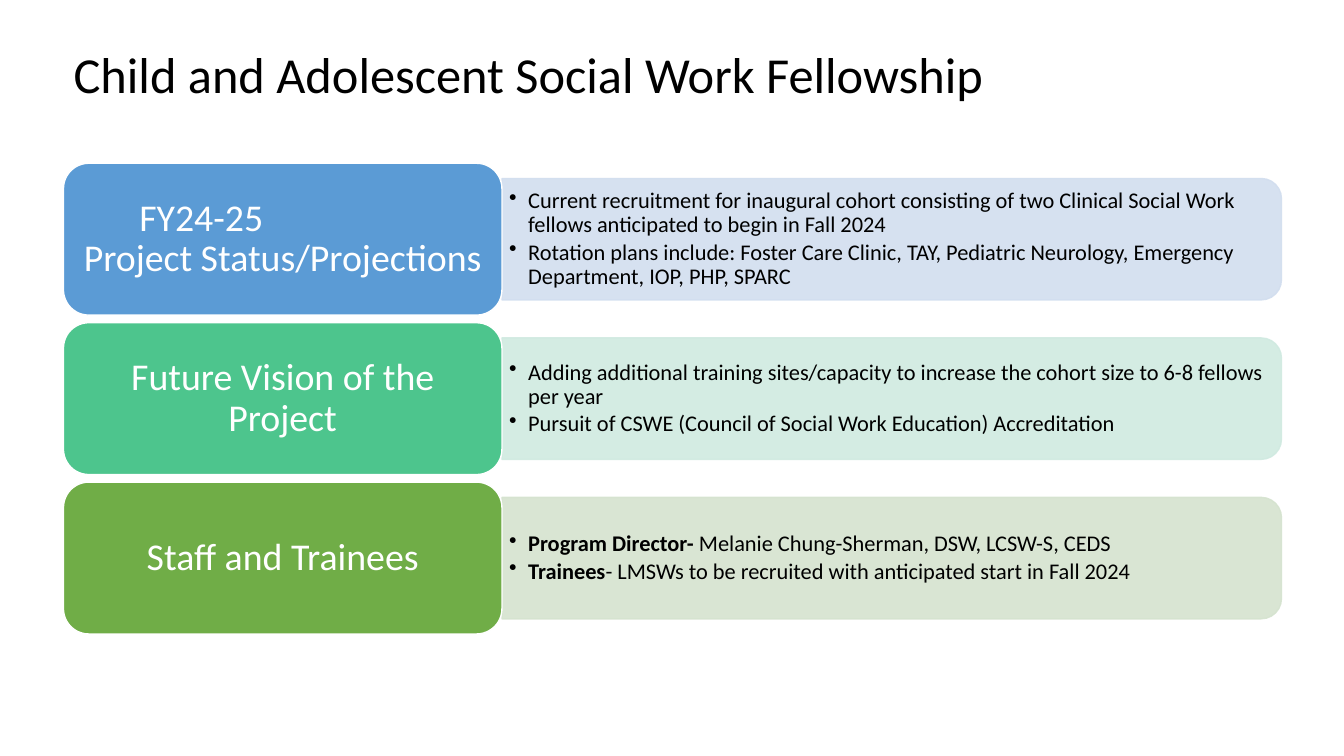
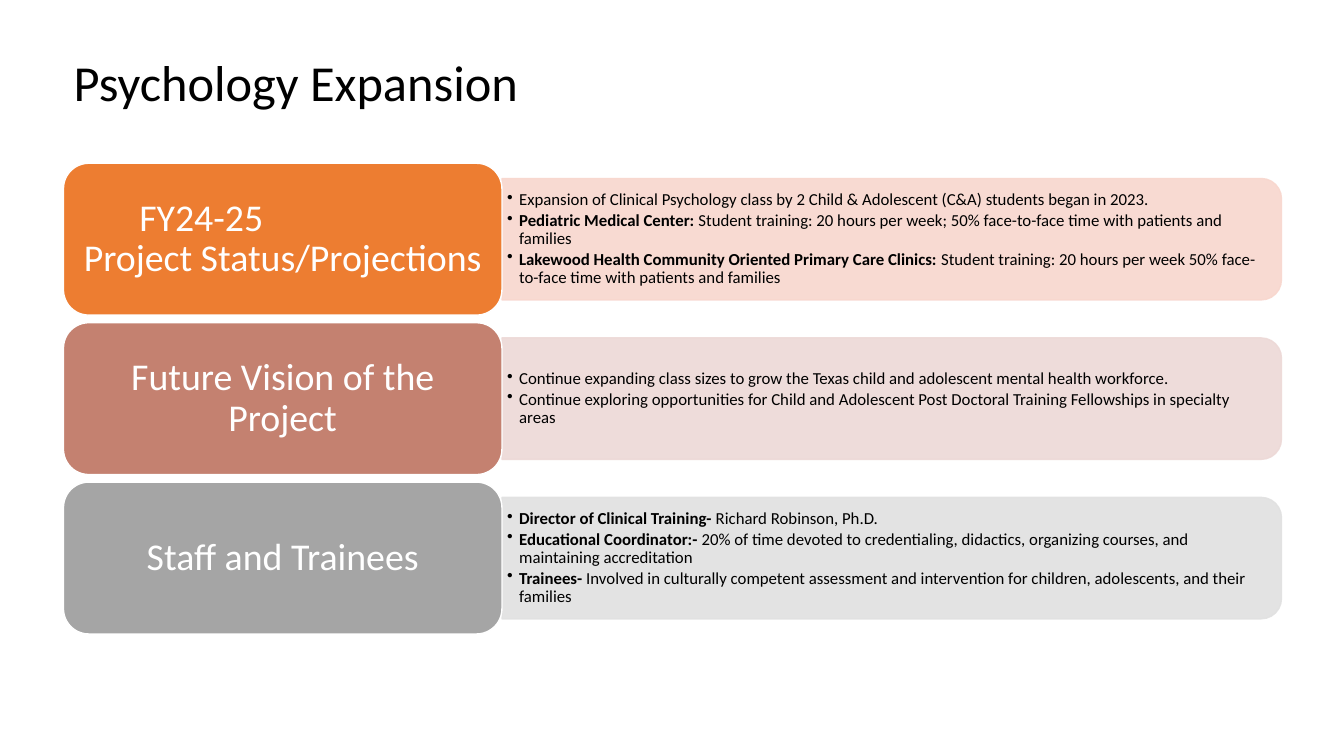
from dataclasses import dataclass

import pptx
import pptx.dml.color
import pptx.enum.shapes
import pptx.enum.text
import pptx.oxml
import pptx.oxml.ns
import pptx.util

RGBColor = pptx.dml.color.RGBColor
Shape = pptx.enum.shapes.MSO_SHAPE
Align = pptx.enum.text.PP_ALIGN
Anchor = pptx.enum.text.MSO_ANCHOR
Inches = pptx.util.Inches
Pt = pptx.util.Pt

FONT = "Calibri"
BLACK = RGBColor(0x00, 0x00, 0x00)
WHITE = RGBColor(0xFF, 0xFF, 0xFF)
BLUE = RGBColor(0x5B, 0x9B, 0xD5)
PALE_BLUE = RGBColor(0xD2, 0xDE, 0xEF)
MINT = RGBColor(0x4D, 0xC5, 0x8D)
PALE_MINT = RGBColor(0xD0, 0xEA, 0xE1)
GREEN = RGBColor(0x70, 0xAD, 0x47)
PALE_GREEN = RGBColor(0xD5, 0xE3, 0xCF)
ORANGE = RGBColor(0xED, 0x7D, 0x31)
PALE_ORANGE = RGBColor(0xF8, 0xD7, 0xCE)
ROSE = RGBColor(0xC4, 0x81, 0x70)
PALE_ROSE = RGBColor(0xED, 0xD9, 0xD7)
GRAY = RGBColor(0xA5, 0xA5, 0xA5)
PALE_GRAY = RGBColor(0xE1, 0xE1, 0xE1)

COOL = [(BLUE, PALE_BLUE), (MINT, PALE_MINT), (GREEN, PALE_GREEN)]
WARM = [(ORANGE, PALE_ORANGE), (ROSE, PALE_ROSE), (GRAY, PALE_GRAY)]

HEADINGS = [
    ["FY24-25", "Project Status/Projections"],
    ["Future Vision of the Project"],
    ["Staff and Trainees"],
]
TAB_SHARE = 0.36
GAP_SHARE = 0.05
BAR_SHARE = 0.8
LINE_SPACING = 0.9


@dataclass
class Box:
    left: float
    top: float
    width: float
    height: float

    def inner(self, x, y, w, h):
        return Box(self.left + x * self.width, self.top + y * self.height,
                   w * self.width, h * self.height)

    def turned(self):
        return Box(self.left + (self.width - self.height) / 2,
                   self.top + (self.height - self.width) / 2,
                   self.height, self.width)

    def emu(self):
        return [Inches(v) for v in (self.left, self.top, self.width, self.height)]


@dataclass
class BulletStyle:
    size: int
    indent: float
    inset: float


LARGE = BulletStyle(16, 0.19, 0.07)
SMALL = BulletStyle(12, 0.12, 0.05)

PAGE = Box(0, 0, 13.33, 7.5)
DIAGRAM = Box(0.63, 1.62, 12.08, 4.67)


def set_font(paragraph, size, color):
    paragraph.line_spacing = LINE_SPACING
    paragraph.font.size = Pt(size)
    paragraph.font.name = FONT
    paragraph.font.color.rgb = color


def set_frame(frame, inset_x, inset_y):
    frame.word_wrap = True
    frame.vertical_anchor = Anchor.MIDDLE
    frame.margin_left = frame.margin_right = Inches(inset_x)
    frame.margin_top = frame.margin_bottom = Inches(inset_y)


def set_indent(paragraph, left, first=0):
    properties = paragraph._p.get_or_add_pPr()
    properties.set("marL", str(Inches(left)))
    properties.set("indent", str(Inches(first)))
    return properties


def add_panel(slide, kind, box, fill, line):
    panel = slide.shapes.add_shape(kind, *box.emu())
    panel.shadow.inherit = False
    panel.fill.solid()
    panel.fill.fore_color.rgb = fill
    panel.line.color.rgb = line
    panel.line.width = Pt(1)
    return panel


def add_bar(slide, box, color):
    bar = add_panel(slide, Shape.ROUND_2_SAME_RECTANGLE, box.turned(), color, color)
    bar.rotation = 90
    for tint in bar._element.spPr.iter(pptx.oxml.ns.qn("a:srgbClr")):
        tint.append(pptx.oxml.parse_xml(
            '<a:alpha %s val="90000"/>' % pptx.oxml.ns.nsdecls("a")))


def add_bullets(slide, box, bullets, style):
    frame = slide.shapes.add_textbox(*box.emu()).text_frame
    set_frame(frame, style.inset, 0.03)
    for number, (lead, detail) in enumerate(bullets):
        paragraph = frame.paragraphs[0] if number == 0 else frame.add_paragraph()
        properties = set_indent(paragraph, style.indent, -style.indent)
        properties.append(pptx.oxml.parse_xml(
            '<a:buChar %s char="•"/>' % pptx.oxml.ns.nsdecls("a")))
        set_font(paragraph, style.size, BLACK)
        paragraph.space_after = Pt(round(style.size * 0.15, 1))
        if lead:
            lead_run = paragraph.add_run()
            lead_run.text = lead
            lead_run.font.bold = True
        paragraph.add_run().text = detail


def add_tab(slide, box, heading, color):
    frame = add_panel(slide, Shape.ROUNDED_RECTANGLE, box, color, WHITE).text_frame
    set_frame(frame, 0.1, 0.06)
    for number, line in enumerate(heading):
        paragraph = frame.paragraphs[0] if number == 0 else frame.add_paragraph()
        paragraph.text = line
        paragraph.alignment = Align.CENTER
        set_font(paragraph, 27, WHITE)
    if len(heading) > 1:
        frame.paragraphs[0].alignment = Align.LEFT
        set_indent(frame.paragraphs[0], 0.58)


def add_row(slide, box, heading, bullets, colors, style):
    strong, pale = colors
    bar = box.inner(TAB_SHARE, (1 - BAR_SHARE) / 2, 1 - TAB_SHARE, BAR_SHARE)
    add_bar(slide, bar, pale)
    add_bullets(slide, bar.inner(0, 0.05, 0.99, 0.9), bullets, style)
    add_tab(slide, box.inner(0, 0, TAB_SHARE, 1), heading, strong)


def add_title(slide, text, box):
    title = slide.shapes.title
    title.left, title.top, title.width, title.height = box.emu()
    frame = title.text_frame
    frame.text = text
    frame.word_wrap = True
    frame.auto_size = pptx.enum.text.MSO_AUTO_SIZE.NONE
    frame.vertical_anchor = Anchor.TOP
    frame.paragraphs[0].alignment = Align.LEFT
    set_font(frame.paragraphs[0], 36, BLACK)


def add_program_slide(deck, title, title_top, rows, palette, style):
    slide = deck.slides.add_slide(deck.slide_layouts[5])
    add_title(slide, title, Box(DIAGRAM.left, title_top * PAGE.height,
                                DIAGRAM.width, PAGE.height / 8))
    row_share = 1 / (len(rows) + (len(rows) - 1) * GAP_SHARE)
    pitch = row_share * (1 + GAP_SHARE)
    for number, (heading, bullets, colors) in enumerate(zip(HEADINGS, rows, palette)):
        row = DIAGRAM.inner(0, number * pitch, 1, row_share)
        add_row(slide, row, heading, bullets, colors, style)


FELLOWSHIP = [
    [("", "Current recruitment for inaugural cohort consisting of two Clinical "
          "Social Work fellows anticipated to begin in Fall 2024"),
     ("", "Rotation plans include: Foster Care Clinic, TAY, Pediatric Neurology, "
          "Emergency Department, IOP, PHP, SPARC")],
    [("", "Adding additional training sites/capacity to increase the cohort size "
          "to 6-8 fellows per year"),
     ("", "Pursuit of CSWE (Council of Social Work Education) Accreditation")],
    [("Program Director- ", "Melanie Chung-Sherman, DSW, LCSW-S, CEDS"),
     ("Trainees", "- LMSWs to be recruited with anticipated start in Fall 2024")],
]
PSYCHOLOGY = [
    [("", "Expansion of Clinical Psychology class by 2 Child & Adolescent (C&A) "
          "students began in 2023."),
     ("Pediatric Medical Center: ", "Student training: 20 hours per week; 50% "
      "face-to-face time with patients and families"),
     ("Lakewood Health Community Oriented Primary Care Clinics: ",
      "Student training: 20 hours per week 50% face-to-face time with patients "
      "and families")],
    [("", "Continue expanding class sizes to grow the Texas child and adolescent "
          "mental health workforce."),
     ("", "Continue exploring opportunities for Child and Adolescent Post Doctoral "
          "Training Fellowships in specialty areas")],
    [("Director of Clinical Training- ", "Richard Robinson, Ph.D."),
     ("Educational Coordinator:- ", "20% of time devoted to credentialing, "
      "didactics, organizing courses, and maintaining accreditation"),
     ("Trainees- ", "Involved in culturally competent assessment and intervention "
      "for children, adolescents, and their families")],
]


def main():
    deck = pptx.Presentation()
    deck.slide_width = Inches(PAGE.width)
    deck.slide_height = Inches(PAGE.height)
    add_program_slide(deck, "Child and Adolescent Social Work Fellowship", 0.06,
                      FELLOWSHIP, COOL, LARGE)
    add_program_slide(deck, "Psychology Expansion", 0.07, PSYCHOLOGY, WARM, SMALL)
    deck.save("out.pptx")


if __name__ == "__main__":
    main()
